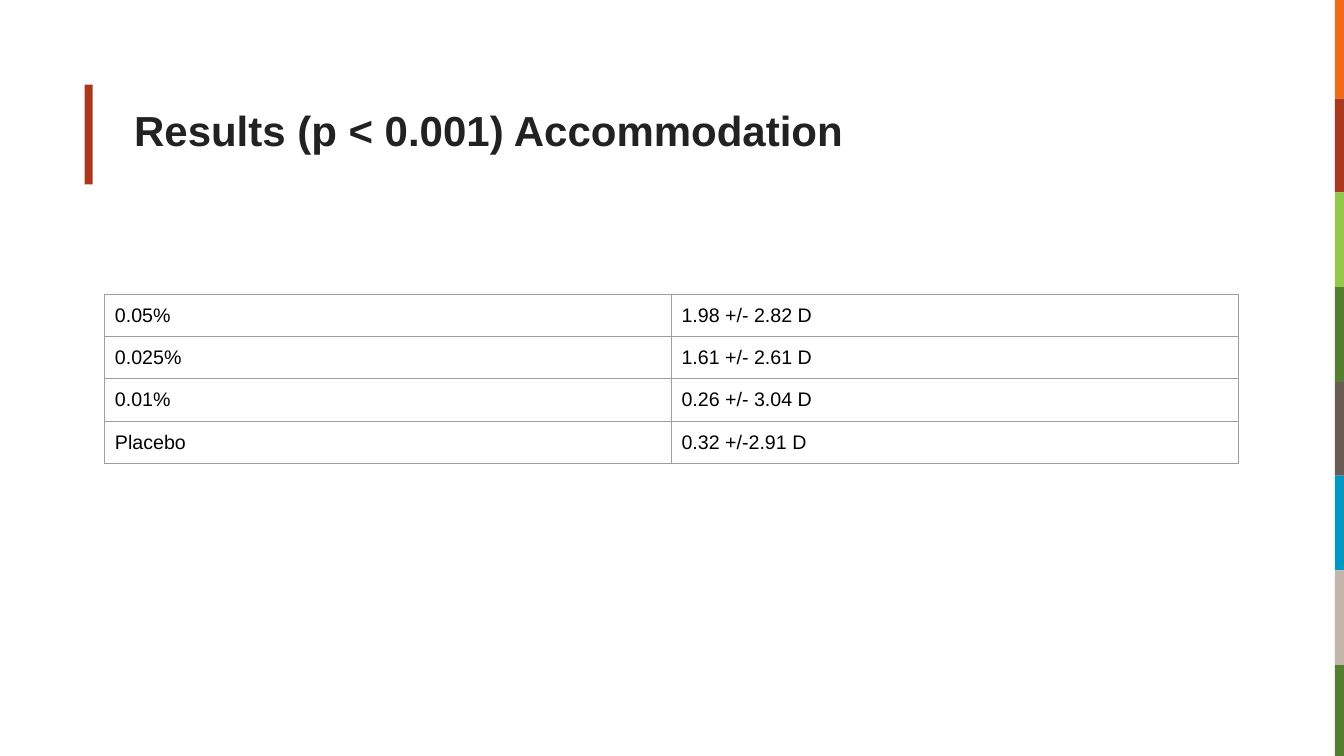
"""Builds a results slide with a title, a two-column table and a colour strip."""
from itertools import pairwise

from pptx import Presentation
from pptx import util as u
from pptx.dml.color import RGBColor
from pptx.enum import shapes, text
from pptx.oxml import parse_xml
from pptx.oxml.ns import nsdecls

EMU_PER_PX = 9144
WIDTH, HEIGHT = 1333, 750
FONT = "Arial"
STRIP = ["EF6B1A", "AB371D", "94C84B", "537D2F", "675B54", "0097C4", "C2B6AC", "537D2F"]
RESULTS = [
    ("0.05%", "1.98 +/- 2.82 D"),
    ("0.025%", "1.61 +/- 2.61 D"),
    ("0.01%", "0.26 +/- 3.04 D"),
    ("Placebo", "0.32 +/-2.91 D"),
]


def px(*lengths):
    return [u.Emu(n * EMU_PER_PX) for n in lengths]


def rgb(color):
    return RGBColor.from_string(color)


def set_font(font, size, color, bold=False):
    font.name, font.size, font.bold = FONT, u.Pt(size), bold
    font.color.rgb = rgb(color)


def add_bar(s, x, y, w, h, color):
    bar = s.shapes.add_shape(shapes.MSO_SHAPE.RECTANGLE, *px(x, y, w, h))
    bar.shadow.inherit = False
    bar.fill.solid()
    bar.fill.fore_color.rgb = rgb(color)
    bar.line.fill.background()


def add_strip(s, x, first, last):
    steps = len(STRIP) - 1
    edges = [0] + [first + (last - first) * i // steps for i in range(steps)] + [HEIGHT]
    for (top, bottom), color in zip(pairwise(edges), STRIP):
        add_bar(s, x, top, WIDTH - x, bottom - top, color)


def set_title(s, words, x, y, w, h):
    title = s.shapes.title
    title.left, title.top, title.width, title.height = px(x, y, w, h)
    tf = title.text_frame
    tf.text = words
    tf.vertical_anchor = text.MSO_ANCHOR.MIDDLE
    tf.auto_size = text.MSO_AUTO_SIZE.NONE
    p = tf.paragraphs[0]
    p.alignment = text.PP_ALIGN.LEFT
    p.line_spacing = 1.15
    set_font(p.runs[0].font, 30, "222222", bold=True)


def set_borders(cell, color, width):
    props = cell._tc.get_or_add_tcPr()
    for side in ("lnL", "lnR", "lnT", "lnB"):
        props.append(parse_xml(
            f'<a:{side} {nsdecls("a")} w="{u.Pt(width)}"><a:solidFill>'
            f'<a:srgbClr val="{color}"/></a:solidFill></a:{side}>'))


def add_results(s, x, y, col_w, row_h):
    rows, cols = len(RESULTS), len(RESULTS[0])
    table = s.shapes.add_table(rows, cols, *px(x, y, col_w * cols, row_h * rows)).table
    table.first_row = table.horz_banding = False
    for i, row in enumerate(RESULTS):
        for j, value in enumerate(row):
            cell = table.cell(i, j)
            cell.margin_left, cell.margin_right, cell.margin_top, cell.margin_bottom = px(10, 10, 10, 10)
            set_borders(cell, "9E9E9E", 0.75)
            cell.fill.background()
            cell.text_frame.text = value
            set_font(cell.text_frame.paragraphs[0].runs[0].font, 14, "000000")


def main():
    prs = Presentation()
    prs.slide_width, prs.slide_height = px(WIDTH, HEIGHT)
    s = prs.slides.add_slide(prs.slide_layouts[5])
    add_bar(s, 84, 84, 8, 99, "AB371D")
    add_strip(s, 1324, 98, 754)
    set_title(s, "Results (p < 0.001) Accommodation", 123, 62, 1100, 125)
    add_results(s, 104, 292, 562, 42)
    prs.save("out.pptx")


if __name__ == "__main__":
    main()
